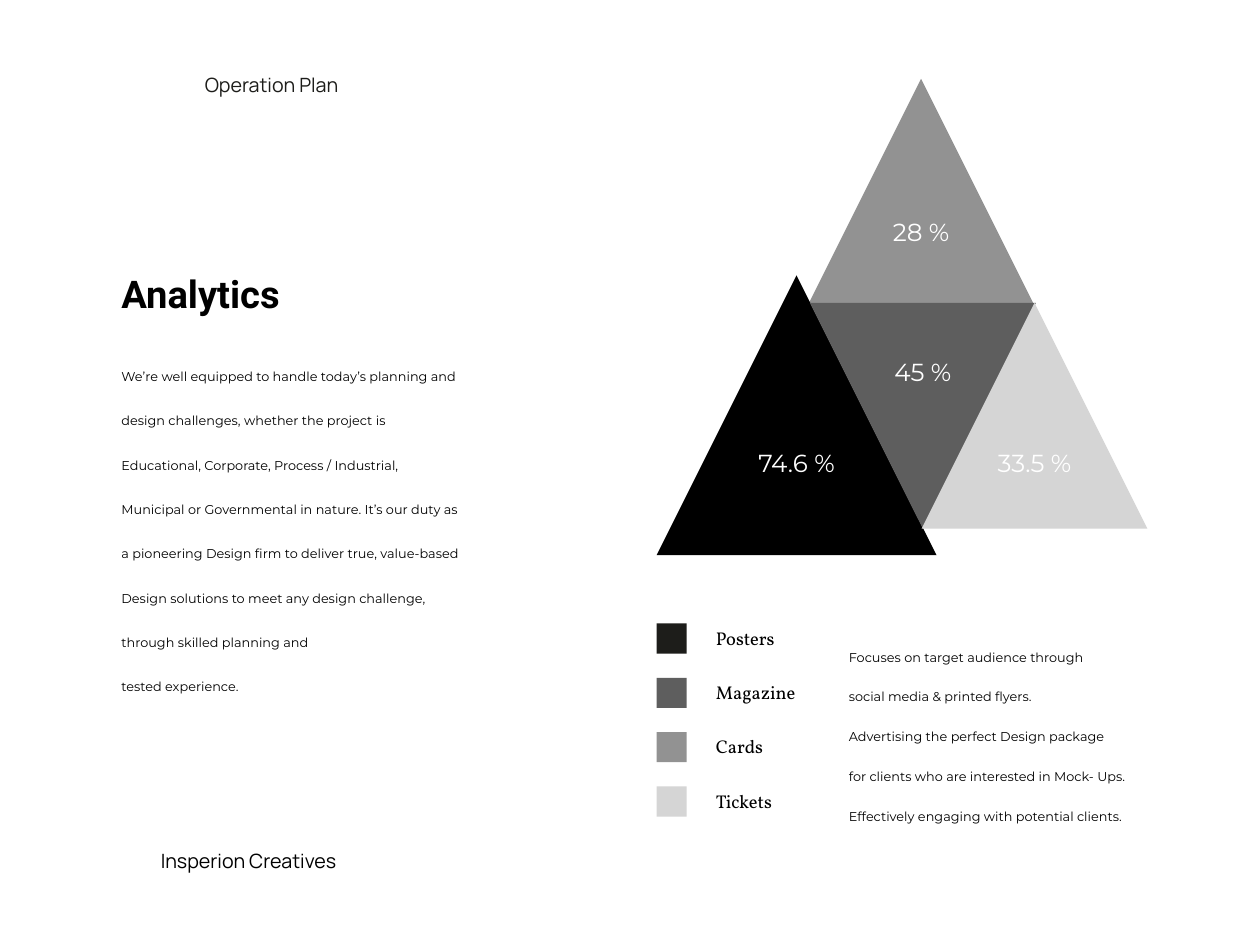
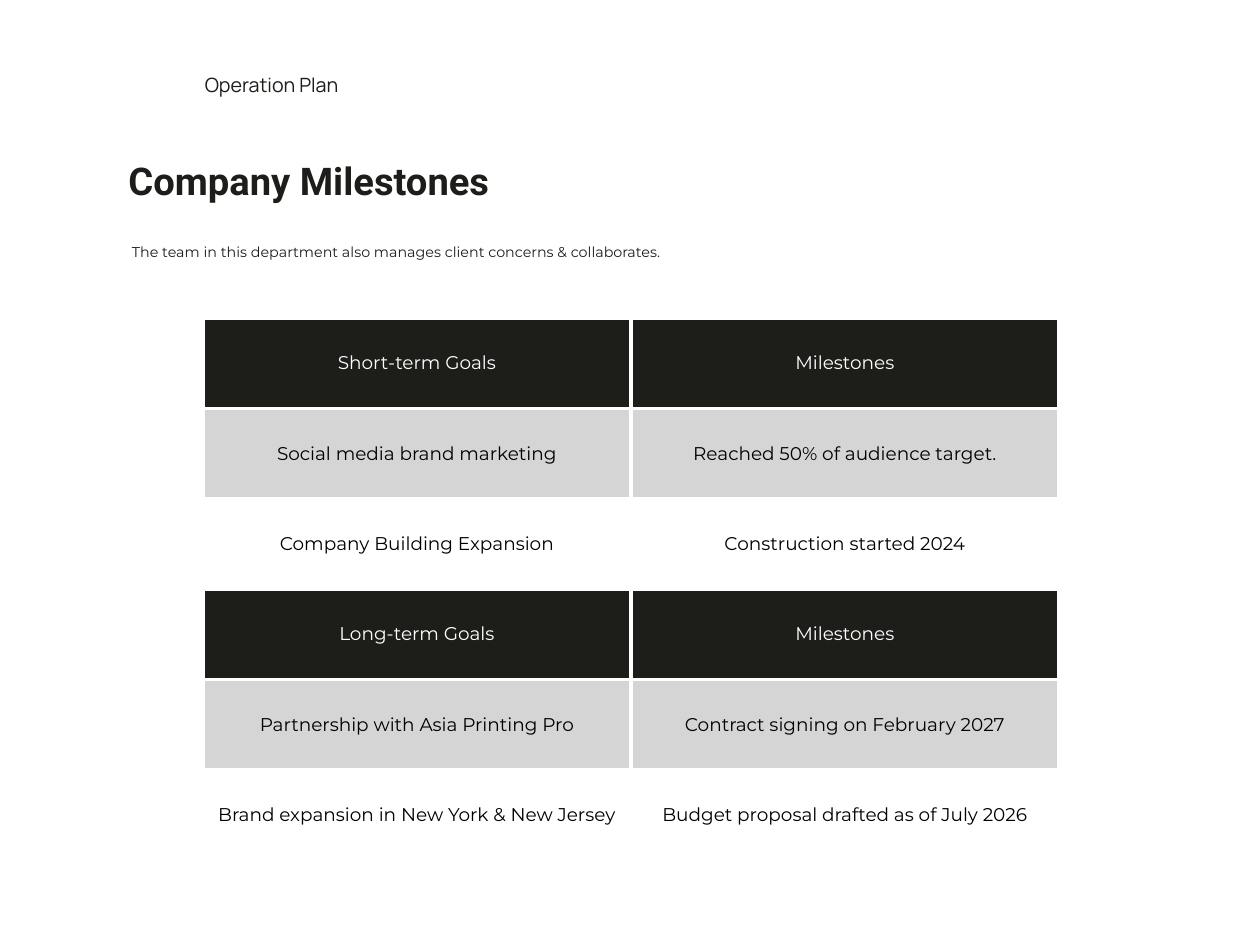
from dataclasses import dataclass
from lxml.etree import SubElement
from pptx import Presentation
from pptx.dml.color import RGBColor as Rgb
from pptx.enum.shapes import MSO_SHAPE as Shape
from pptx.enum.text import MSO_ANCHOR as Anchor, MSO_AUTO_SIZE as AutoSize, PP_ALIGN as Align
from pptx.oxml.ns import qn
from pptx.util import Inches, Pt


@dataclass(frozen=True)
class Style:
    font: str
    size: int
    color: str
    bold: bool = False
    raised: bool = False
    spacing: float = 1.0


class Theme:
    black, ink, white = "000000", "1D1D1A", "FFFFFF"
    dark, mid, light = "5E5E5E", "929292", "D5D5D5"
    inset, cell_inset, rule = 0.03, 0.06, 3
    band = Style("Manrope", 16, ink)
    footer = Style("Manrope", 16, black)
    title = Style("Roboto", 31, black, bold=True)
    title_ink = Style("Roboto", 31, ink, bold=True)
    story = Style("Montserrat", 18, black, raised=True, spacing=1.67)
    focus = Style("Montserrat", 18, black, raised=True, spacing=1.5)
    intro = Style("Montserrat", 20, ink, raised=True, spacing=1.2)
    legend = Style("Vollkorn", 15, black)
    share = Style("Montserrat", 20, white)
    head_cell = Style("Montserrat", 15, white)
    body_cell = Style("Montserrat", 15, black)


SLIDE_SIZE = (14.22, 10.67)
SECTION = "Operation Plan"
FOOTER = "Insperion Creatives"

STORY = [
    "We’re well equipped to handle today’s planning and design challenges, whether the project is "
    "Educational, Corporate, Process / Industrial, Municipal or Governmental in nature. It’s our duty "
    "as a pioneering Design firm to deliver true, value-based Design solutions to meet any design "
    "challenge, through skilled planning and",
    "tested experience.",
]
FOCUS = [
    "Focuses on target audience through",
    "social media & printed flyers.",
    "Advertising the perfect Design package",
    "for clients who are interested in Mock- Ups. Effectively engaging with potential clients.",
]
# share, fill, left, top, side, rotation, label middle
TRIANGLES = [
    ("28 %", Theme.mid, 9.12, 0.89, 2.55, 0, 2.61),
    ("74.6 %", Theme.black, 7.41, 3.11, 3.16, 0, 5.22),
    ("45 %", Theme.dark, 9.14, 3.42, 2.55, 180, 4.2),
    ("33.5 %", Theme.light, 10.4, 3.42, 2.55, 0, 5.22),
]
LEGEND = [
    ("Posters", Theme.ink),
    ("Magazine", Theme.dark),
    ("Cards", Theme.mid),
    ("Tickets", Theme.light),
]
LEGEND_LEFT, LEGEND_TOP, LEGEND_LAST, SWATCH = 7.41, 7.04, 8.88, 0.34

INTRO = "The team in this department also manages client concerns & collaborates."
GOALS = [
    [
        ("Short-term Goals", "Milestones"),
        ("Social media brand marketing", "Reached 50% of audience target."),
        ("Company Building Expansion", "Construction started 2024"),
    ],
    [
        ("Long-term Goals", "Milestones"),
        ("Partnership with Asia Printing Pro", "Contract signing on February 2027"),
        ("Brand expansion in New York & New Jersey", "Budget proposal drafted as of July 2026"),
    ],
]
ROW_LOOKS = [
    (Theme.ink, Theme.head_cell),
    (Theme.light, Theme.body_cell),
    (Theme.white, Theme.body_cell),
]
GOALS_LEFT, GOALS_TOP, COLUMN, ROW = 2.29, 3.59, 4.83, 1.02


def box(*lengths):
    return [Inches(length) for length in lengths]


def write(frame, lines, style, align=Align.LEFT):
    frame.text = "\n".join(lines)
    for paragraph in frame.paragraphs:
        paragraph.alignment = align
        paragraph.line_spacing = style.spacing
        for run in paragraph.runs:
            run.font.name = style.font
            run.font.size = Pt(style.size)
            run.font.bold = style.bold
            run.font.color.rgb = Rgb.from_string(style.color)
            if style.raised:
                run.font._element.set("baseline", "30000")


def fit(frame, anchor):
    frame.word_wrap = True
    frame.auto_size = AutoSize.NONE
    frame.vertical_anchor = anchor
    frame.margin_left = frame.margin_right = Inches(Theme.inset)
    frame.margin_top = frame.margin_bottom = Inches(Theme.inset)


def add_text(slide, at, lines, style, align=Align.LEFT, anchor=Anchor.MIDDLE):
    frame = slide.shapes.add_textbox(*box(*at)).text_frame
    fit(frame, anchor)
    write(frame, lines, style, align)


def add_figure(slide, kind, at, color, rotation=0):
    figure = slide.shapes.add_shape(kind, *box(*at))
    figure.shadow.inherit = False
    figure.fill.solid()
    figure.fill.fore_color.rgb = Rgb.from_string(color)
    figure.line.fill.background()
    figure.rotation = rotation


def start_slide(deck, title, at, style):
    slide = deck.slides.add_slide(deck.slide_layouts[5])
    heading = slide.shapes.title
    heading.left, heading.top, heading.width, heading.height = box(*at)
    fit(heading.text_frame, Anchor.MIDDLE)
    write(heading.text_frame, [title], style)
    add_text(slide, (1.36, 0.79, 3.41, 0.33), [SECTION], Theme.band, Align.CENTER)
    return slide


def set_borders(cell):
    properties = cell._tc.get_or_add_tcPr()
    for position, side in enumerate(("lnL", "lnR", "lnT", "lnB")):
        line = SubElement(properties, qn(f"a:{side}"), w=str(Pt(Theme.rule)))
        SubElement(SubElement(line, qn("a:solidFill")), qn("a:srgbClr"), val=Theme.white)
        properties.insert(position, line)


def add_goals(slide, top, rows):
    at = box(GOALS_LEFT, top, COLUMN * len(rows[0]), ROW * len(rows))
    table = slide.shapes.add_table(len(rows), len(rows[0]), *at).table
    table.first_row = table.horz_banding = False
    for r, (texts, (fill, style)) in enumerate(zip(rows, ROW_LOOKS)):
        for c, text in enumerate(texts):
            cell = table.cell(r, c)
            cell.margin_left = cell.margin_right = Inches(Theme.cell_inset)
            cell.margin_top = cell.margin_bottom = Inches(Theme.cell_inset)
            cell.vertical_anchor = Anchor.MIDDLE
            cell.fill.solid()
            cell.fill.fore_color.rgb = Rgb.from_string(fill)
            set_borders(cell)
            write(cell.text_frame, [text], style, Align.CENTER)


def build_analytics(deck):
    slide = start_slide(deck, "Analytics", (1.34, 3.03, 2.37, 0.57), Theme.title)
    add_text(slide, (1.34, 3.9, 3.92, 3.85), STORY, Theme.story, anchor=Anchor.TOP)
    add_text(slide, (9.55, 7.12, 3.87, 2.37), FOCUS, Theme.focus, anchor=Anchor.TOP)
    add_text(slide, (1.26, 9.53, 3.09, 0.38), [FOOTER], Theme.footer, Align.CENTER)
    pitch = (LEGEND_LAST - LEGEND_TOP) / (len(LEGEND) - 1)
    for i, (name, color) in enumerate(LEGEND):
        top = LEGEND_TOP + i * pitch
        add_figure(slide, Shape.RECTANGLE, (LEGEND_LEFT, top, SWATCH, SWATCH), color)
        add_text(slide, (LEGEND_LEFT + 0.64, top, 1.47, 0.32), [name], Theme.legend)
    for _, color, left, top, side, rotation, _ in TRIANGLES:
        add_figure(slide, Shape.ISOSCELES_TRIANGLE, (left, top, side, side), color, rotation)
    width, height = 0.98, 0.39
    for share, _, left, _, side, _, middle in TRIANGLES:
        at = (left + (side - width) / 2, middle - height / 2, width, height)
        add_text(slide, at, [share], Theme.share, Align.CENTER)


def build_milestones(deck):
    slide = start_slide(deck, "Company Milestones", (1.42, 1.75, 5.32, 0.57), Theme.title_ink)
    add_text(slide, (1.46, 2.62, 7.13, 0.31), [INTRO], Theme.intro, anchor=Anchor.TOP)
    for i, rows in enumerate(GOALS):
        add_goals(slide, GOALS_TOP + i * ROW * len(rows), rows)


def main():
    deck = Presentation()
    deck.slide_width, deck.slide_height = box(*SLIDE_SIZE)
    build_analytics(deck)
    build_milestones(deck)
    deck.save("out.pptx")


if __name__ == "__main__":
    main()
